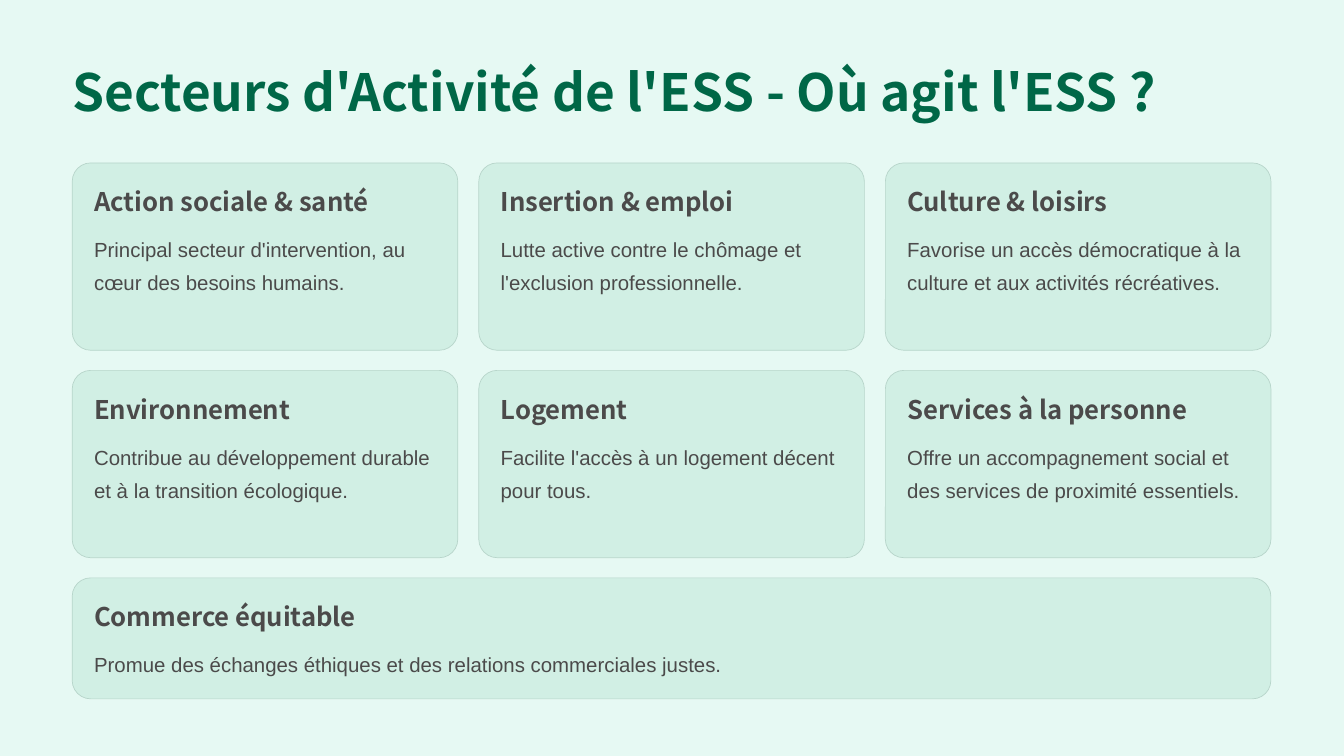
"""Builds the slide on the sectors of activity of the ESS."""
from pptx import Presentation
from pptx.dml.color import RGBColor
from pptx.enum.shapes import MSO_SHAPE as Shape
from pptx.enum.text import MSO_ANCHOR as Anchor, MSO_AUTO_SIZE as AutoSize, PP_ALIGN as Align
from pptx.util import Inches, Pt

COLORS = {name: RGBColor.from_string(value) for name, value in {
    "page": "E6F9F3", "title": "006747", "card": "D1EFE4",
    "border": "B7D5CA", "text": "4B4A4A"}.items()}
HEADING_FONT = "Noto Sans CJK SC"
STYLES = {
    "title": (55, {"size": Pt(44), "name": HEADING_FONT, "bold": True}, "title"),
    "heading": (27.5, {"size": Pt(22), "name": HEADING_FONT, "bold": True}, "text"),
    "body": (28, {"size": Pt(17.5), "name": "Arial", "bold": False}, "text"),
}
LEFT, TOP, GAP, PADDING = 0.86, 1.94, 0.25, 0.26
COLUMN_WIDTH, ROW_HEIGHT, LAST_HEIGHT = 4.59, 2.23, 1.44
COLUMNS, RADIUS = 3, 0.22
FULL_WIDTH = COLUMNS * COLUMN_WIDTH + (COLUMNS - 1) * GAP
SECTORS = [
    ("Action sociale & santé",
     "Principal secteur d'intervention, au cœur des besoins humains."),
    ("Insertion & emploi",
     "Lutte active contre le chômage et l'exclusion professionnelle."),
    ("Culture & loisirs",
     "Favorise un accès démocratique à la culture et aux activités récréatives."),
    ("Environnement",
     "Contribue au développement durable et à la transition écologique."),
    ("Logement",
     "Facilite l'accès à un logement décent pour tous."),
    ("Services à la personne",
     "Offre un accompagnement social et des services de proximité essentiels."),
    ("Commerce équitable",
     "Promue des échanges éthiques et des relations commerciales justes."),
]


def write(box, text, style, wrap):
    """Fill a text box or placeholder in one of the named styles."""
    spacing, font_values, color = STYLES[style]
    frame = box.text_frame
    frame_values = {"margin_left": 0, "margin_right": 0, "margin_top": 0,
                    "margin_bottom": 0, "word_wrap": wrap,
                    "vertical_anchor": Anchor.TOP, "auto_size": AutoSize.NONE}
    for name, value in frame_values.items():
        setattr(frame, name, value)
    para = frame.paragraphs[0]
    para.alignment = Align.LEFT
    para.line_spacing = Pt(spacing)
    span = para.add_run()
    span.text = text
    for name, value in font_values.items():
        setattr(span.font, name, value)
    span.font.color.rgb = COLORS[color]


deck = Presentation()
deck.slide_width, deck.slide_height = Inches(16), Inches(9)
page = deck.slides.add_slide(deck.slide_layouts[5])
page.background.fill.solid()
page.background.fill.fore_color.rgb = COLORS["page"]

title = page.shapes.title
title_place = {"left": LEFT, "top": 0.68, "width": 13.11, "height": 0.77}
for side, length in title_place.items():
    setattr(title, side, Inches(length))
write(title, "Secteurs d'Activité de l'ESS - Où agit l'ESS ?", "title", False)

for index, (heading, body) in enumerate(SECTORS):
    row, column = divmod(index, COLUMNS)
    is_last = index == len(SECTORS) - 1
    width = FULL_WIDTH if is_last else COLUMN_WIDTH
    height = LAST_HEIGHT if is_last else ROW_HEIGHT
    left = LEFT + column * (COLUMN_WIDTH + GAP)
    top = TOP + row * (ROW_HEIGHT + GAP - 0.01)

    card = page.shapes.add_shape(
        Shape.ROUNDED_RECTANGLE, Inches(left), Inches(top), Inches(width), Inches(height))
    card.adjustments[0] = RADIUS / height
    card.shadow.inherit = False
    card.fill.solid()
    card.fill.fore_color.rgb = COLORS["card"]
    card.line.color.rgb = COLORS["border"]
    card.line.width = Pt(0.6)

    text_left, text_width = Inches(left + PADDING), Inches(width - 2 * PADDING)
    body_height = 0.39 if is_last else 0.79
    heading_box = page.shapes.add_textbox(
        text_left, Inches(top + PADDING), text_width, Inches(0.39))
    write(heading_box, heading, "heading", False)
    body_box = page.shapes.add_textbox(
        text_left, Inches(top + 0.79), text_width, Inches(body_height))
    write(body_box, body, "body", True)

deck.save("out.pptx")
